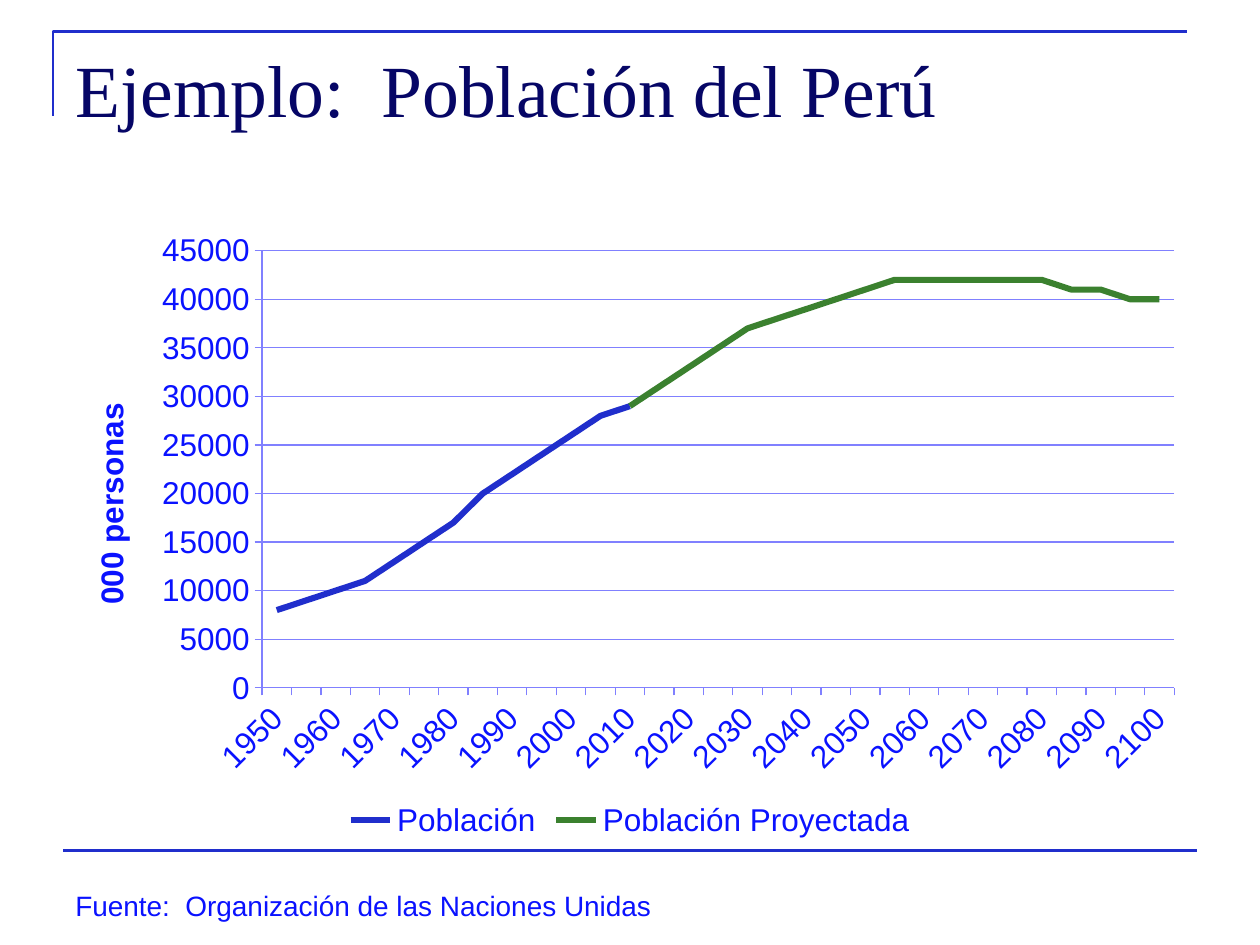
from lxml import etree
from pptx import Presentation
from pptx.chart.data import CategoryChartData
from pptx.dml.color import RGBColor
from pptx.enum.chart import XL_CHART_TYPE as ChartType, XL_LEGEND_POSITION as LegendPosition
from pptx.enum.chart import XL_TICK_MARK as TickMark
from pptx.enum.text import MSO_ANCHOR as Anchor, PP_ALIGN as Align
from pptx.oxml import parse_xml
from pptx.oxml.ns import nsdecls, qn
from pptx.util import Inches, Pt

BLUE, GREEN, NAVY, TEXT_BLUE, GRID = "202ECC", "3B812F", "060666", "0A12FF", "8080FF"


def color(value):
    return RGBColor.from_string(value)


def style_font(font, name, size, value, bold=False):
    font.name, font.size, font.bold = name, Pt(size), bold
    font.color.rgb = color(value)


prs = Presentation()
prs.slide_width, prs.slide_height = Inches(10), Inches(7.5)
slide = prs.slides.add_slide(prs.slide_layouts[5])
shapes = slide.shapes

# Corner rule and bottom rule
builder = shapes.build_freeform(Inches(0.42), Inches(0.92), scale=1.0)
builder.add_line_segments(
    [(Inches(0.42), Inches(0.25)), (Inches(9.42), Inches(0.25))], close=False)
corner_rule = builder.convert_to_shape()
corner_rule.shadow.inherit = False
corner_rule.fill.background()
bottom_rule = shapes.add_connector(1, Inches(0.5), Inches(6.75), Inches(9.5), Inches(6.75))
etree.SubElement(bottom_rule._element.spPr, qn("a:effectLst"))
for rule in (corner_rule, bottom_rule):
    rule.line.color.rgb = color(BLUE)
    rule.line.width = Pt(1.5)

# Title
title = shapes.title
title.left, title.top, title.width, title.height = (
    Inches(0.5), Inches(0.3), Inches(9), Inches(1.25))
title.text_frame.text = "Ejemplo:  Población del Perú"
title.text_frame.vertical_anchor = Anchor.TOP
heading = title.text_frame.paragraphs[0]
heading.alignment = Align.LEFT
style_font(heading.runs[0].font, "Times New Roman", 42, NAVY)

# Population chart: the projection starts at the last observed year
observed = [8000, 9000, 10000, 11000, 13000, 15000, 17000, 20000, 22000, 24000,
            26000, 28000, 29000]
projected = [29000, 31000, 33000, 35000, 37000, 38000, 39000, 40000, 41000, 42000,
             42000, 42000, 42000, 42000, 42000, 41000, 41000, 40000, 40000]
years = [str(year) for year in range(1950, 2101, 5)]
population = CategoryChartData(number_format="0")
population.categories = years
population.add_series("Población", observed + [None] * (len(years) - len(observed)))
population.add_series("Población Proyectada",
                      [None] * (len(years) - len(projected)) + projected)
chart_width, chart_height = 9, 4.95
chart = shapes.add_chart(ChartType.LINE, Inches(0.5), Inches(1.75),
                         Inches(chart_width), Inches(chart_height), population).chart
chart.has_title = False
style_font(chart.font, "Arial", 18, TEXT_BLUE)
chart.has_legend = True
chart.legend.position = LegendPosition.BOTTOM
chart.legend.include_in_layout = False
chart.plots[0].vary_by_categories = False
for series, line_color in zip(chart.plots[0].series, (BLUE, GREEN)):
    series.smooth = False
    series.format.line.color.rgb = color(line_color)
    series.format.line.width = Pt(3.5)

year_axis, people_axis = chart.category_axis, chart.value_axis
people_axis.minimum_scale, people_axis.maximum_scale = 0, 45000
people_axis.major_unit = 5000
people_axis.has_major_gridlines = True
for line in (year_axis.format.line, people_axis.format.line,
             people_axis.major_gridlines.format.line):
    line.color.rgb = color(GRID)
    line.width = Pt(0.7)
for axis in (year_axis, people_axis):
    axis.major_tick_mark = TickMark.OUTSIDE
    style_font(axis.tick_labels.font, "Arial", 18, TEXT_BLUE)
people_axis.axis_title.text_frame.text = "000 personas"
axis_run = people_axis.axis_title.text_frame.paragraphs[0].runs[0]
style_font(axis_run.font, "Arial", 18, TEXT_BLUE, bold=True)

# Slanted labels on every second year
year_xml = year_axis._element
year_xml.find(qn("c:txPr")).find(qn("a:bodyPr")).set("rot", "-2700000")
label_skip = parse_xml(f'<c:tickLblSkip {nsdecls("c")} val="2"/>')
year_xml.find(qn("c:noMultiLvlLbl")).addprevious(label_skip)

# Plot area: inches within the chart, stored as fractions of its size
plot_area = chart._chartSpace.chart.plotArea
for old_layout in plot_area.findall(qn("c:layout")):
    plot_area.remove(old_layout)
fractions = "".join(f'<c:{tag} val="{value}"/>' for tag, value in (
    ("layoutTarget", "inner"), ("xMode", "edge"), ("yMode", "edge"),
    ("x", 1.58 / chart_width), ("y", 0.24 / chart_height),
    ("w", 7.24 / chart_width), ("h", 3.47 / chart_height)))
plot_area.insert(0, parse_xml(
    f'<c:layout {nsdecls("c")}><c:manualLayout>{fractions}</c:manualLayout></c:layout>'))

# Source line
source = shapes.add_textbox(Inches(0.5), Inches(7), Inches(5), Inches(0.37)).text_frame
source.word_wrap = True
source.text = "Fuente:  Organización de las Naciones Unidas"
style_font(source.paragraphs[0].runs[0].font, "Arial", 16, TEXT_BLUE)

prs.save("out.pptx")
